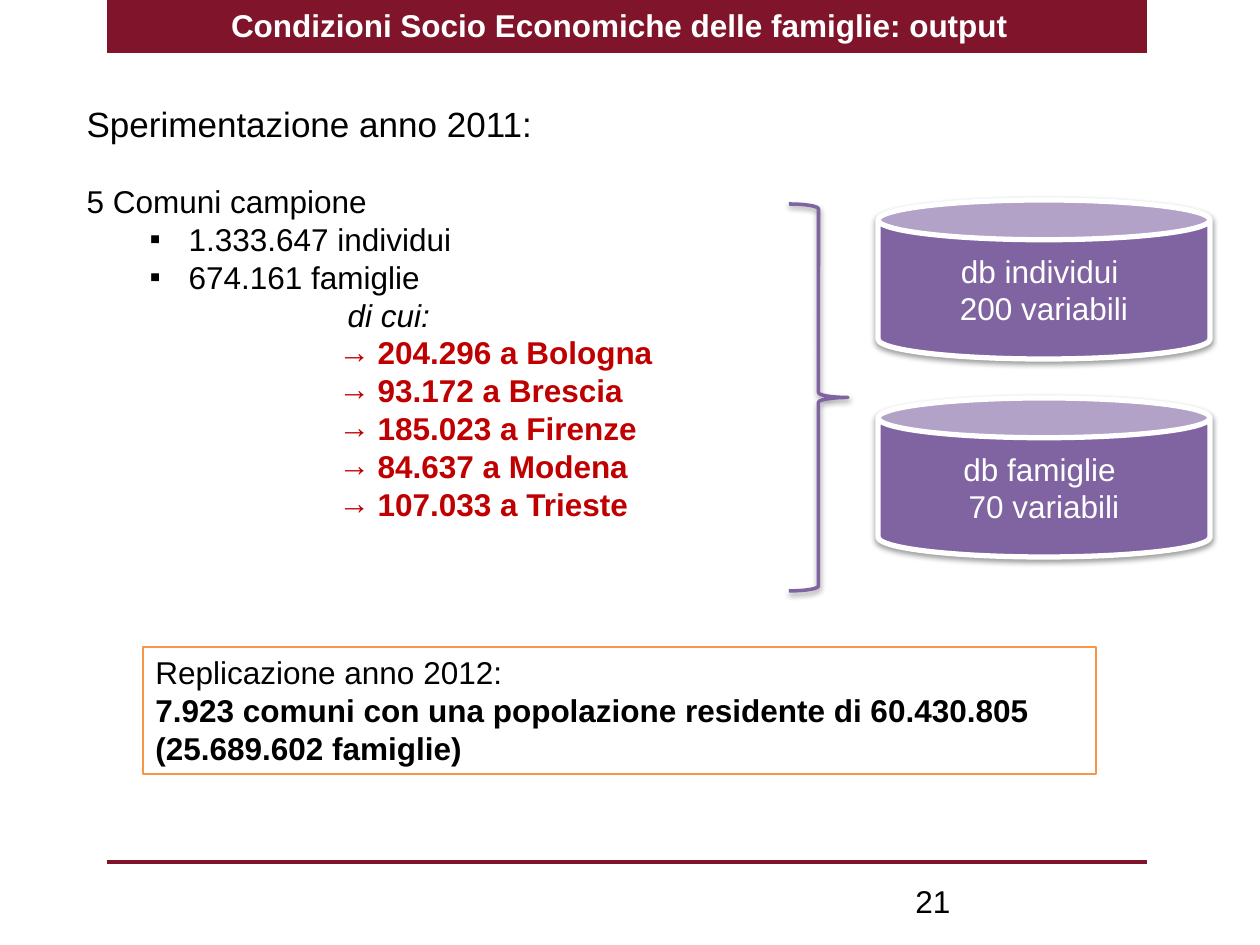
from lxml.etree import SubElement
from pptx import Presentation
from pptx.dml.color import RGBColor
from pptx.enum.shapes import MSO_CONNECTOR, MSO_SHAPE
from pptx.enum.text import MSO_ANCHOR, MSO_AUTO_SIZE, PP_ALIGN
from pptx.oxml.ns import qn
from pptx.util import Emu, Pt

PIXELS_PER_INCH = 126
FONT = "Arial"
COLORS = {
    "burgundy": "7F142A",
    "purple": "8064A2",
    "orange": "F79646",
    "red": "C00000",
    "white": "FFFFFF",
    "black": "000000",
}
CITIES = [
    "204.296 a Bologna",
    "93.172 a Brescia",
    "185.023 a Firenze",
    "84.637 a Modena",
    "107.033 a Trieste",
]


def px(length):
    return Emu(round(length * 914400 / PIXELS_PER_INCH))


def color(name):
    return RGBColor.from_string(COLORS[name])


def place(shape, left, top, width, height):
    shape.left, shape.top = px(left), px(top)
    shape.width, shape.height = px(width), px(height)


def prepare_frame(shape, anchor=MSO_ANCHOR.TOP):
    frame = shape.text_frame
    frame.word_wrap = True
    frame.auto_size = MSO_AUTO_SIZE.NONE
    frame.vertical_anchor = anchor
    return frame


def write(frame, text, size=18, fill="black", bold=False, italic=False,
          align=PP_ALIGN.LEFT, before=0, margin=0, indent=0, bullet=None):
    """Fill the empty first paragraph of the frame, or append a new one."""
    paragraph = frame.paragraphs[0]
    if paragraph.runs:
        paragraph = frame.add_paragraph()
    properties = paragraph._p.get_or_add_pPr()
    properties.set("marL", str(px(margin)))
    properties.set("indent", str(px(indent)))
    if bullet:
        SubElement(properties, qn("a:buFont"), typeface=FONT)
        SubElement(properties, qn("a:buChar"), char=bullet)
    else:
        SubElement(properties, qn("a:buNone"))
    paragraph.alignment = align
    paragraph.line_spacing = Pt(size * 1.2)
    paragraph.space_before = Pt(before)
    paragraph.space_after = Pt(0)
    run = paragraph.add_run()
    run.text = text
    font = run.font
    font.name, font.size = FONT, Pt(size)
    font.bold, font.italic = bold, italic
    font.color.rgb = color(fill)


def add_shape(slide, kind, box, fill=None, line=None, line_width=1):
    shape = slide.shapes.add_shape(kind, *map(px, box))
    shape.shadow.inherit = False
    if fill:
        shape.fill.solid()
        shape.fill.fore_color.rgb = color(fill)
    else:
        shape.fill.background()
    if line:
        shape.line.color.rgb = color(line)
        shape.line.width = Pt(line_width)
    else:
        shape.line.fill.background()
    return shape


def add_soft_shadow(shape):
    effects = shape._element.spPr.find(qn("a:effectLst"))
    shadow = SubElement(effects, qn("a:outerShdw"), blurRad="40000",
                        dist="20000", dir="5400000", rotWithShape="0")
    shade = SubElement(shadow, qn("a:srgbClr"), val=COLORS["black"])
    SubElement(shade, qn("a:alpha"), val="38000")


def add_frame_decoration(slide):
    """Header band, sent behind the title, and footer rule."""
    band = add_shape(slide, MSO_SHAPE.RECTANGLE, (107, 0, 1040, 53), "burgundy")
    slide.shapes._spTree.insert(2, band._element)
    rule = slide.shapes.add_connector(
        MSO_CONNECTOR.STRAIGHT, px(107), px(862), px(1147), px(862))
    rule.line.color.rgb = color("burgundy")
    rule.line.width = Pt(2)
    SubElement(rule._element.spPr, qn("a:effectLst"))


def fill_title(slide):
    title = slide.shapes.title
    place(title, 98, 0, 1043, 55)
    write(prepare_frame(title), "Condizioni Socio Economiche delle famiglie: output",
          fill="white", bold=True, align=PP_ALIGN.CENTER)


def fill_body(slide):
    body = slide.placeholders[1]
    place(body, 74, 96, 953, 552)
    frame = prepare_frame(body)
    write(frame, "Sperimentazione anno 2011:", size=20)
    write(frame, "5 Comuni campione", before=21.6)
    for count in ("1.333.647 individui", "674.161 famiglie"):
        write(frame, count, margin=102, indent=-39, bullet="▪")
    write(frame, "di cui:", italic=True, margin=261)
    for city in CITIES:
        write(frame, city, fill="red", bold=True, margin=291, indent=-39, bullet="→")


def add_database(slide, top, lines):
    can = add_shape(slide, MSO_SHAPE.CAN, (878, top, 332, 159), "purple", "white", 3)
    add_soft_shadow(can)
    frame = prepare_frame(can, MSO_ANCHOR.MIDDLE)
    for line in lines:
        write(frame, line, fill="white", align=PP_ALIGN.CENTER)


def add_replication_box(slide):
    box = add_shape(slide, MSO_SHAPE.RECTANGLE, (143, 647, 953, 127),
                    line="orange", line_width=0.75)
    frame = prepare_frame(box)
    write(frame, "Replicazione anno 2012:")
    write(frame, "7.923 comuni con una popolazione residente di 60.430.805 "
                 "(25.689.602 famiglie)", bold=True)


def add_page_number(slide):
    box = slide.shapes.add_textbox(px(903), px(876), px(294), px(50))
    write(prepare_frame(box), "21")


def main():
    presentation = Presentation()
    presentation.slide_width, presentation.slide_height = px(1260), px(945)
    slide = presentation.slides.add_slide(presentation.slide_layouts[1])
    add_frame_decoration(slide)
    fill_title(slide)
    fill_body(slide)
    brace = add_shape(slide, MSO_SHAPE.RIGHT_BRACE, (789, 204, 59, 387),
                      line="purple", line_width=2)
    add_soft_shadow(brace)
    add_replication_box(slide)
    add_database(slide, 200, ("db individui ", "200 variabili"))
    add_database(slide, 398, ("db famiglie ", "70 variabili"))
    add_page_number(slide)
    presentation.save("out.pptx")


if __name__ == "__main__":
    main()
